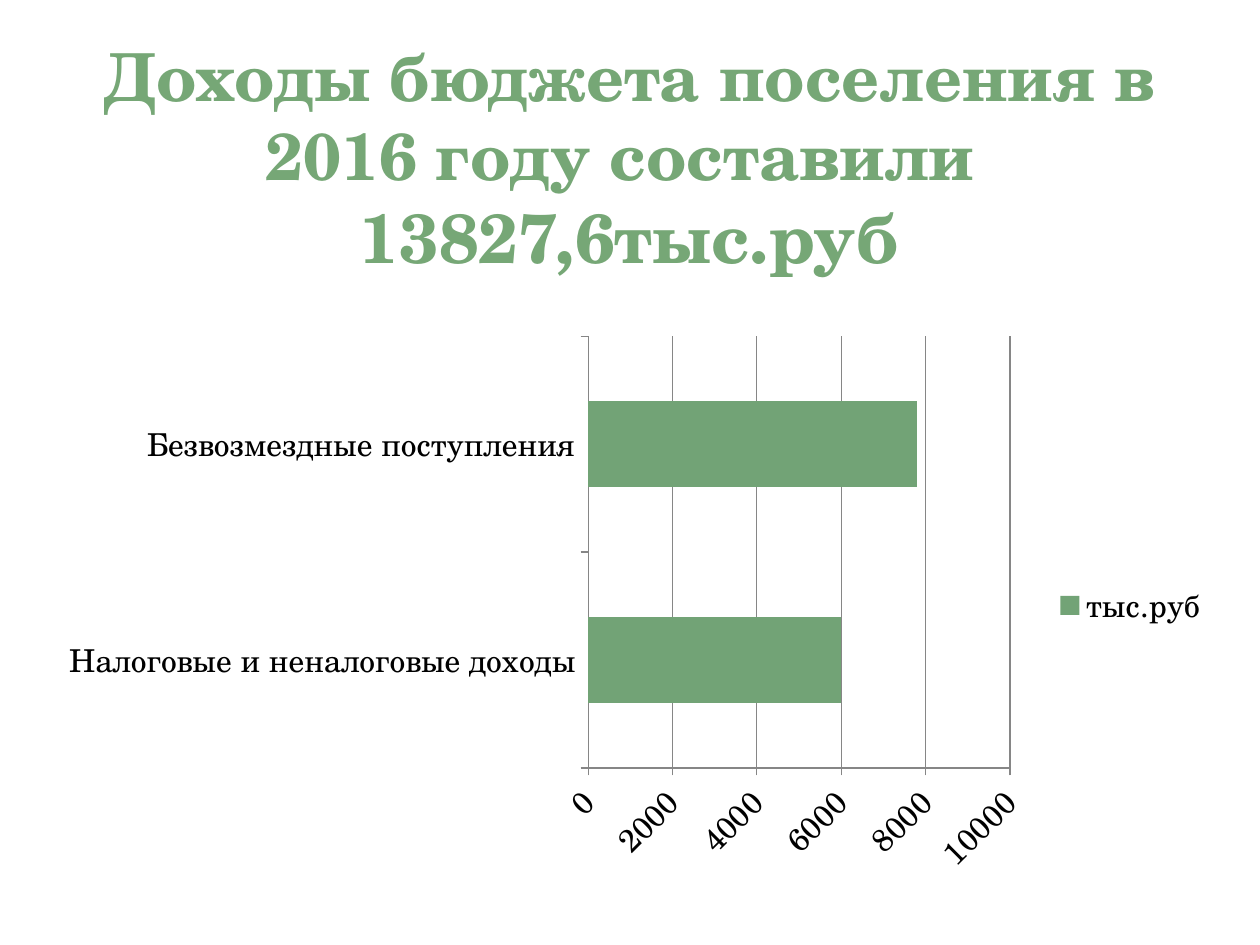
from lxml import etree
from pptx import Presentation, util as u
from pptx.chart.data import CategoryChartData
from pptx.dml.color import RGBColor
from pptx.enum import chart as ch, text
from pptx.oxml.ns import qn

COLORS = {"title": "76A776", "bar": "72A376", "line": "868686", "text": "000000"}
FONT = "TeX Gyre Schola"


class Deck:
    """Hold the style and the current slide, and draw each kind of element."""

    def __init__(self, width, height):
        self.prs = Presentation()
        self.prs.slide_width, self.prs.slide_height = u.Inches(width), u.Inches(height)
        self.slide = self.prs.slides.add_slide(self.prs.slide_layouts[6])

    def color(self, name):
        return RGBColor.from_string(COLORS[name])

    def style(self, font, color, **values):
        for key, value in {"name": FONT, **values}.items():
            setattr(font, key, value)
        font.color.rgb = self.color(color)

    def title(self, box, lines):
        tf = self.slide.shapes.add_textbox(*map(u.Inches, box)).text_frame
        values = {"word_wrap": True, "vertical_anchor": text.MSO_ANCHOR.BOTTOM}
        for key, value in values.items():
            setattr(tf, key, value)
        p = tf.paragraphs[0]
        p.alignment = text.PP_ALIGN.CENTER
        for i, (line, size) in enumerate(lines):
            if i:
                p.add_line_break()
            r = p.add_run()
            r.text = line
            self.style(r.font, "title", size=u.Pt(size), bold=True)

    def bar_chart(self, box, categories, name, values, plot_box):
        data = CategoryChartData()
        data.categories = categories
        data.add_series(name, values)
        chart = self.slide.shapes.add_chart(
            ch.XL_CHART_TYPE.BAR_STACKED, *map(u.Inches, box), data).chart
        self.style(chart.font, "text", size=u.Pt(18))
        chart.has_title = False
        chart.has_legend = True
        chart.legend.position = ch.XL_LEGEND_POSITION.RIGHT
        chart.legend.include_in_layout = False
        plot = chart.plots[0]
        for key, value in {"gap_width": 150, "overlap": 100, "vary_by_categories": False}.items():
            setattr(plot, key, value)
        fill = plot.series[0].format.fill
        fill.solid()
        fill.fore_color.rgb = self.color("bar")
        category, value_axis = chart.category_axis, chart.value_axis
        category.has_major_gridlines = False
        value_axis.has_major_gridlines = True
        for key, value in {"minimum_scale": 0, "maximum_scale": 10000, "major_unit": 2000}.items():
            setattr(value_axis, key, value)
        for axis in (category, value_axis):
            axis.major_tick_mark = ch.XL_TICK_MARK.OUTSIDE
        for part in (category, value_axis, value_axis.major_gridlines):
            part.format.line.color.rgb = self.color("line")
            part.format.line.width = u.Pt(0.75)
        self.style(value_axis.tick_labels.font, "text", size=u.Pt(18))
        value_axis._element.find(qn("c:txPr")).find(qn("a:bodyPr")).set("rot", "-2700000")
        self.place_plot(chart, plot_box)

    def place_plot(self, chart, plot_box):
        area = chart._chartSpace.chart.plotArea
        for old in area.findall(qn("c:layout")):
            area.remove(old)
        layout = etree.Element(qn("c:layout"))
        area.insert(0, layout)
        manual = etree.SubElement(layout, qn("c:manualLayout"))
        items = [("layoutTarget", "inner"), ("xMode", "edge"), ("yMode", "edge")]
        for tag, value in items + list(zip("xywh", plot_box)):
            etree.SubElement(manual, qn(f"c:{tag}")).set("val", str(value))


def main():
    deck = Deck(10, 7.5)
    deck.title((0.23, 0.23, 9.53, 2.02), [
        ("Доходы бюджета поселения в 2016 году составили ", 37.8),
        ("13827,6тыс.руб", 39.6),
    ])
    deck.bar_chart(
        (0.39, 2.58, 9.3, 4.45),
        ["Налоговые и неналоговые доходы", "Безвозмездные поступления"],
        "тыс.руб", [6000, 7800], (0.46, 0.02, 0.36, 0.77))
    deck.prs.save("out.pptx")


if __name__ == "__main__":
    main()
